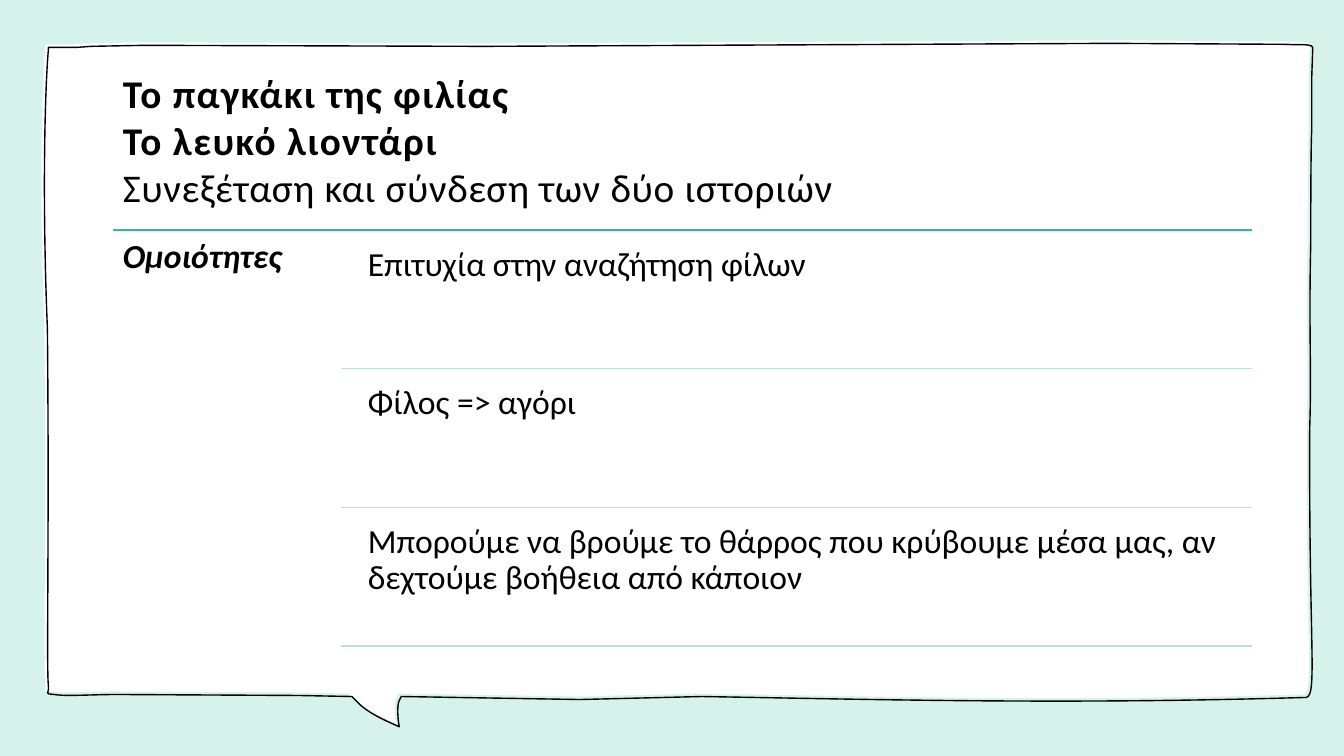
from dataclasses import dataclass

from lxml.etree import SubElement
from pptx import Presentation
from pptx.dml.color import RGBColor
from pptx.enum.shapes import MSO_CONNECTOR
from pptx.enum.text import MSO_ANCHOR, PP_ALIGN
from pptx.oxml.ns import qn
from pptx.util import Inches, Pt


@dataclass(frozen=True)
class Theme:
    font: str = "Calibri"
    background: RGBColor = RGBColor(0xD5, 0xF2, 0xEB)
    paper: RGBColor = RGBColor(0xFF, 0xFF, 0xFF)
    ink: RGBColor = RGBColor(0x00, 0x00, 0x00)
    main_rule: RGBColor = RGBColor(0x38, 0xB6, 0x98)
    row_rule: RGBColor = RGBColor(0xBF, 0xDE, 0xD4)
    title_size: int = 28
    body_size: int = 24
    line_width: int = 1


THEME = Theme()

LEFT, RIGHT = 1.12, 12.42
LIST_TOP, LIST_BOTTOM = 2.28, 6.41
RULE_LEFT, ITEM_LEFT = 3.38, 3.55
BUBBLE_LEFT, BUBBLE_TOP = 0.44, 0.43
BUBBLE_WIDTH, BUBBLE_HEIGHT = 12.58, 6.78
PAPER_SHIFT = -0.03

# Pairs are corners; groups of six are Bézier curves (two controls, one end).
BUBBLE = [
    (11.03, 0.43), (12.76, 0.44),
    (12.89, 0.45, 13, 0.43, 13.02, 0.47), (13.01, 0.77),
    (13.01, 0.94, 13.01, 1.13, 13.01, 1.3),
    (13, 1.42, 13, 2.35, 13, 2.42),
    (12.98, 3.3, 13.01, 3.65, 12.99, 4.25),
    (12.98, 6.56, 13.08, 6.95, 12.93, 6.92),
    (10.56, 6.99, 8.72, 6.94, 6.96, 6.91),
    (5.75, 6.94), (3.98, 6.91), (3.96, 6.95),
    (3.94, 6.99, 3.94, 7.1, 3.96, 7.21),
    (3.85, 7.16, 3.7, 7.1, 3.58, 7),
    (3.49, 6.91), (2.96, 6.9), (1.17, 6.89),
    (0.9, 6.89, 0.66, 6.91, 0.54, 6.89),
    (0.43, 6.88, 0.49, 6.89, 0.48, 6.8),
    (0.46, 6.65, 0.49, 5.22, 0.47, 3.26),
    (0.42, 2.07, 0.44, 0.96, 0.48, 0.49),
    (0.48, 0.48, 0.48, 0.48, 0.48, 0.47),
    (0.54, 0.47), (0.77, 0.47), (0.9, 0.46), (1.43, 0.45), (4.8, 0.46),
    (11.03, 0.43),
]

TITLE = ["Το παγκάκι της φιλίας", "Το λευκό λιοντάρι",
         "Συνεξέταση και σύνδεση των δύο ιστοριών"]
SIMILARITIES = [
    "Επιτυχία στην αναζήτηση φίλων",
    "Φίλος => αγόρι",
    "Μπορούμε να βρούμε το θάρρος που κρύβουμε μέσα μας, αν δεχτούμε "
    "βοήθεια από κάποιον",
]


def draw_curves(shape, segments):
    """Replace the straight outline of a freeform by corners and curves."""
    outline = shape._element.spPr.find(".//" + qn("a:path"))
    for command in list(outline):
        outline.remove(command)
    outline.set("w", str(Inches(BUBBLE_WIDTH)))
    outline.set("h", str(Inches(BUBBLE_HEIGHT)))
    for index, segment in enumerate(segments):
        straight = "a:lnTo" if index else "a:moveTo"
        tag = straight if len(segment) == 2 else "a:cubicBezTo"
        command = SubElement(outline, qn(tag))
        for x, y in zip(segment[::2], segment[1::2]):
            SubElement(command, qn("a:pt"),
                       x=str(Inches(x - BUBBLE_LEFT)),
                       y=str(Inches(y - BUBBLE_TOP)))
    SubElement(outline, qn("a:close"))


def add_bubble(slide, shift=0):
    corners = [(Inches(segment[-2]), Inches(segment[-1]))
               for segment in BUBBLE]
    builder = slide.shapes.build_freeform(*corners[0])
    builder.add_line_segments(corners[1:], close=True)
    shape = builder.convert_to_shape()
    draw_curves(shape, BUBBLE)
    shape.left = Inches(BUBBLE_LEFT + shift)
    shape.top = Inches(BUBBLE_TOP + shift)
    shape.width = Inches(BUBBLE_WIDTH)
    shape.height = Inches(BUBBLE_HEIGHT)
    shape.shadow.inherit = False
    return shape


def add_speech_bubble(slide):
    """Lay white paper under a slightly offset ink outline."""
    paper = add_bubble(slide, PAPER_SHIFT)
    paper.fill.solid()
    paper.fill.fore_color.rgb = THEME.paper
    paper.line.fill.background()
    outline = add_bubble(slide)
    outline.fill.background()
    outline.line.color.rgb = THEME.ink
    outline.line.width = Pt(THEME.line_width)


def add_rule(slide, left, top, color):
    rule = slide.shapes.add_connector(
        MSO_CONNECTOR.STRAIGHT, Inches(left), Inches(top),
        Inches(RIGHT), Inches(top))
    rule.line.color.rgb = color
    rule.line.width = Pt(THEME.line_width)
    SubElement(rule._element.spPr, qn("a:effectLst"))


def add_text_box(slide, left, top, width, height, text, size):
    """Add a wrapped one-paragraph box and return its text frame."""
    box = slide.shapes.add_textbox(
        Inches(left), Inches(top), Inches(width), Inches(height))
    frame = box.text_frame
    frame.word_wrap = True
    frame.text = text
    paragraph = frame.paragraphs[0]
    paragraph.alignment = PP_ALIGN.LEFT
    for run in paragraph.runs:
        run.font.name = THEME.font
        run.font.size = Pt(size)
        run.font.color.rgb = THEME.ink
    return frame


def add_title(slide):
    frame = add_text_box(slide, LEFT, 0.61, RIGHT - LEFT, 1.55,
                         "\v".join(TITLE), THEME.title_size)
    frame.vertical_anchor = MSO_ANCHOR.MIDDLE
    *story_runs, subject_run = frame.paragraphs[0].runs
    for run in story_runs:
        run.font.bold = True
        run._r.get_or_add_rPr().set("spc", "100")
    subject_run._r.get_or_add_rPr().set("spc", "50")


def add_body_text(slide, left, top, width, height, text):
    frame = add_text_box(slide, left, top, width, height, text,
                         THEME.body_size)
    frame.margin_top = frame.margin_bottom = Inches(0.1)
    frame.paragraphs[0].line_spacing = 0.9
    return frame


def add_similarities(slide):
    add_rule(slide, LEFT, LIST_TOP, THEME.main_rule)
    heading = add_body_text(slide, LEFT, LIST_TOP, RULE_LEFT - LEFT, 4.19,
                            "Ομοιότητες")
    heading_font = heading.paragraphs[0].runs[0].font
    heading_font.bold = heading_font.italic = True
    row_pitch = (LIST_BOTTOM - LIST_TOP) / len(SIMILARITIES)
    for row, text in enumerate(SIMILARITIES):
        top = LIST_TOP + row * row_pitch
        add_body_text(slide, ITEM_LEFT, top + 0.07, RIGHT - ITEM_LEFT, 1.31,
                      text)
        add_rule(slide, RULE_LEFT, top + row_pitch, THEME.row_rule)


def main():
    presentation = Presentation()
    presentation.slide_width = Inches(13.33)
    presentation.slide_height = Inches(7.5)
    slide = presentation.slides.add_slide(presentation.slide_layouts[6])
    slide.background.fill.solid()
    slide.background.fill.fore_color.rgb = THEME.background
    add_speech_bubble(slide)
    add_title(slide)
    add_similarities(slide)
    presentation.save("out.pptx")


if __name__ == "__main__":
    main()
